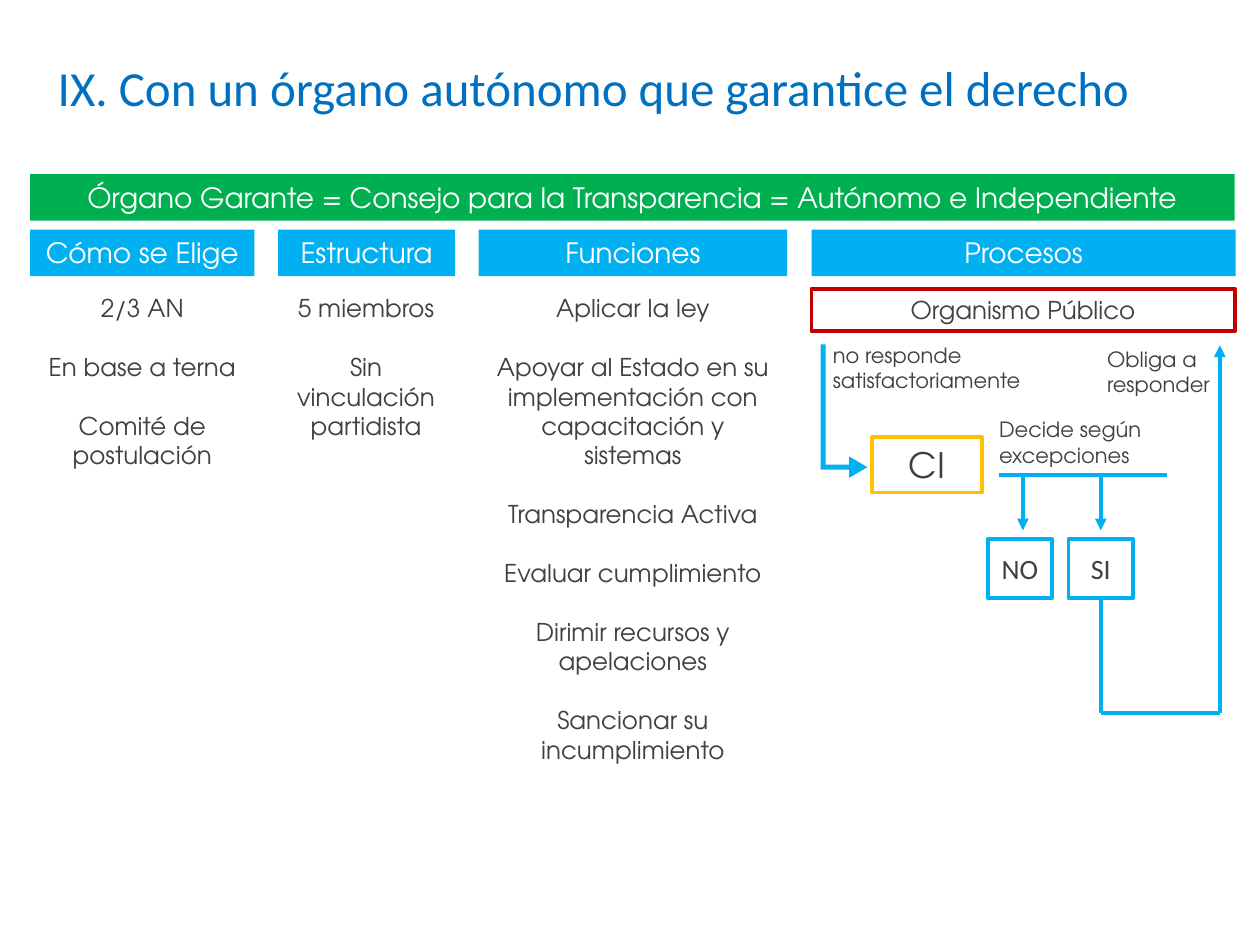
from dataclasses import dataclass
from typing import Any

from lxml import etree
from pptx import Presentation
from pptx import util as u
from pptx.dml.color import RGBColor
from pptx.enum import shapes, text
from pptx.oxml.ns import qn

GREEN, SKY, BLUE = "00B050", "00B0F0", "0070C0"
RED, AMBER, WHITE, GREY = "C00000", "FFC000", "FFFFFF", "404040"

COLUMNS = [
    ("Cómo se Elige", 0.61, 4.52),
    ("Estructura", 5.61, 3.56),
    ("Funciones", 9.65, 6.22),
    ("Procesos", 16.36, 8.55),
]
LISTS = [
    (0.61, 4.52, 3.84, ["2/3 AN", "En base a terna", "Comité de postulación"]),
    (5.36, 4.04, 3.25, ["5 miembros", "Sin vinculación partidista"]),
    (9.65, 6.22, 9.83, [
        "Aplicar la ley",
        "Apoyar al Estado en su implementación con capacitación y sistemas",
        "Transparencia Activa",
        "Evaluar cumplimiento",
        "Dirimir recursos y apelaciones",
        "Sancionar su incumplimiento",
    ]),
]
NOTES = [
    ("no responde satisfactoriamente", 16.54, 6.78, 4.45),
    ("Decide según excepciones", 19.89, 8.28, 3.48),
    ("Obliga a responder", 22.07, 6.86, 3.3),
]


def color(value):
    """Turn a hex string into a colour."""
    return RGBColor.from_string(value)


def write(box, lines, *, size, ink=GREY, font="TeX Gyre Adventor",
          align=text.PP_ALIGN.CENTER, anchor=text.MSO_ANCHOR.TOP, gap=0):
    """Fill a box with one formatted paragraph per line."""
    frame = box.text_frame
    frame.word_wrap = True
    frame.auto_size = text.MSO_AUTO_SIZE.NONE
    frame.vertical_anchor = anchor
    for index, line in enumerate(lines):
        para = frame.add_paragraph() if index else frame.paragraphs[0]
        para.alignment = align
        para.space_before = u.Pt(gap if index else 0)
        span = para.add_run()
        span.text = line
        span.font.name, span.font.size = font, u.Pt(size)
        span.font.color.rgb = color(ink)


@dataclass
class Board:
    """Holds the slide and the line style shared by its elements."""
    page: Any
    stroke: float = 2.25

    def title(self, words, *place):
        """Place and format the title."""
        box = self.page.shapes.title
        box.left, box.top, box.width, box.height = map(u.Cm, place)
        write(box, [words], size=28, ink=BLUE, font="Calibri",
              align=text.PP_ALIGN.LEFT)

    def shape(self, kind, *place, fill=None, line=None):
        """Add a preset shape with a flat fill or an outline."""
        box = self.page.shapes.add_shape(kind, *map(u.Cm, place))
        box.shadow.inherit = False
        if fill:
            box.fill.solid()
            box.fill.fore_color.rgb = color(fill)
        else:
            box.fill.background()
        if line:
            box.line.color.rgb = color(line)
            box.line.width = u.Pt(self.stroke)
        else:
            box.line.fill.background()
        return box

    def panel(self, words, *place, fill=None, line=None, **style):
        """Add a rectangle with a caption."""
        box = self.shape(shapes.MSO_SHAPE.RECTANGLE, *place, fill=fill, line=line)
        write(box, [words], **style)
        return box

    def label(self, lines, *place, **style):
        """Add a text box."""
        box = self.page.shapes.add_textbox(*map(u.Cm, place))
        write(box, lines, **style)

    def line(self, *ends, arrow=False):
        """Add a straight line, with an arrowhead on request."""
        link = self.page.shapes.add_connector(
            shapes.MSO_CONNECTOR.STRAIGHT, *map(u.Cm, ends))
        link.line.color.rgb = color(SKY)
        link.line.width = u.Pt(self.stroke)
        if arrow:
            etree.SubElement(link.line._get_or_add_ln(), qn("a:tailEnd"), type="triangle")
        etree.SubElement(link._element.spPr, qn("a:effectLst"))
        return link


def main():
    """Build the slide and save it."""
    deck = Presentation()
    deck.slide_width, deck.slide_height = u.Cm(25.4), u.Cm(19.05)
    board = Board(deck.slides.add_slide(deck.slide_layouts[5]))

    board.title("IX. Con un órgano autónomo que garantice el derecho",
                0.91, 1.04, 22.45, 1.45)
    board.panel("Órgano Garante = Consejo para la Transparencia = Autónomo e Independiente",
                0.61, 3.51, 24.28, 0.94, fill=GREEN, size=16, ink=WHITE)
    for heading, left, width in COLUMNS:
        board.panel(heading, left, 4.63, width, 0.94, fill=SKY, size=16, ink=WHITE)
    for left, width, height, lines in LISTS:
        board.label(lines, left, 5.79, width, height, size=14, gap=16.8)

    board.panel("Organismo Público", 16.36, 5.82, 8.53, 0.86, line=RED, size=14)
    elbow = board.shape(shapes.MSO_SHAPE.BENT_UP_ARROW, 15.67, 7.82, 2.69, 0.94, fill=SKY)
    elbow.rotation = 90
    for index, ratio in enumerate((0.107, 0.23, 0.393)):
        elbow.adjustments[index] = ratio
    for words, left, top, width in NOTES:
        board.label([words], left, top, width, 1.28, size=12, align=text.PP_ALIGN.LEFT)
    board.panel("CI", 17.58, 8.81, 2.21, 1.12, line=AMBER, size=20)

    answers = {}
    for words, left in (("NO", 19.91), ("SI", 21.54)):
        answers[words] = board.panel(words, left, 10.87, 1.3, 1.19, line=SKY, size=16,
                                     font="Calibri", anchor=text.MSO_ANCHOR.MIDDLE)

    fork, floor, yes, back = 9.58, 14.38, 22.19, 24.59
    board.line(20.14, fork, 23.52, fork)
    for x in (20.62, yes):
        board.line(x, fork, x, 10.69, arrow=True)
    board.line(yes, 12.06, yes, floor).begin_connect(answers["SI"], 2)
    board.line(yes, floor, back, floor)
    board.line(back, floor, back, 6.96, arrow=True)

    deck.save("out.pptx")


if __name__ == "__main__":
    main()
